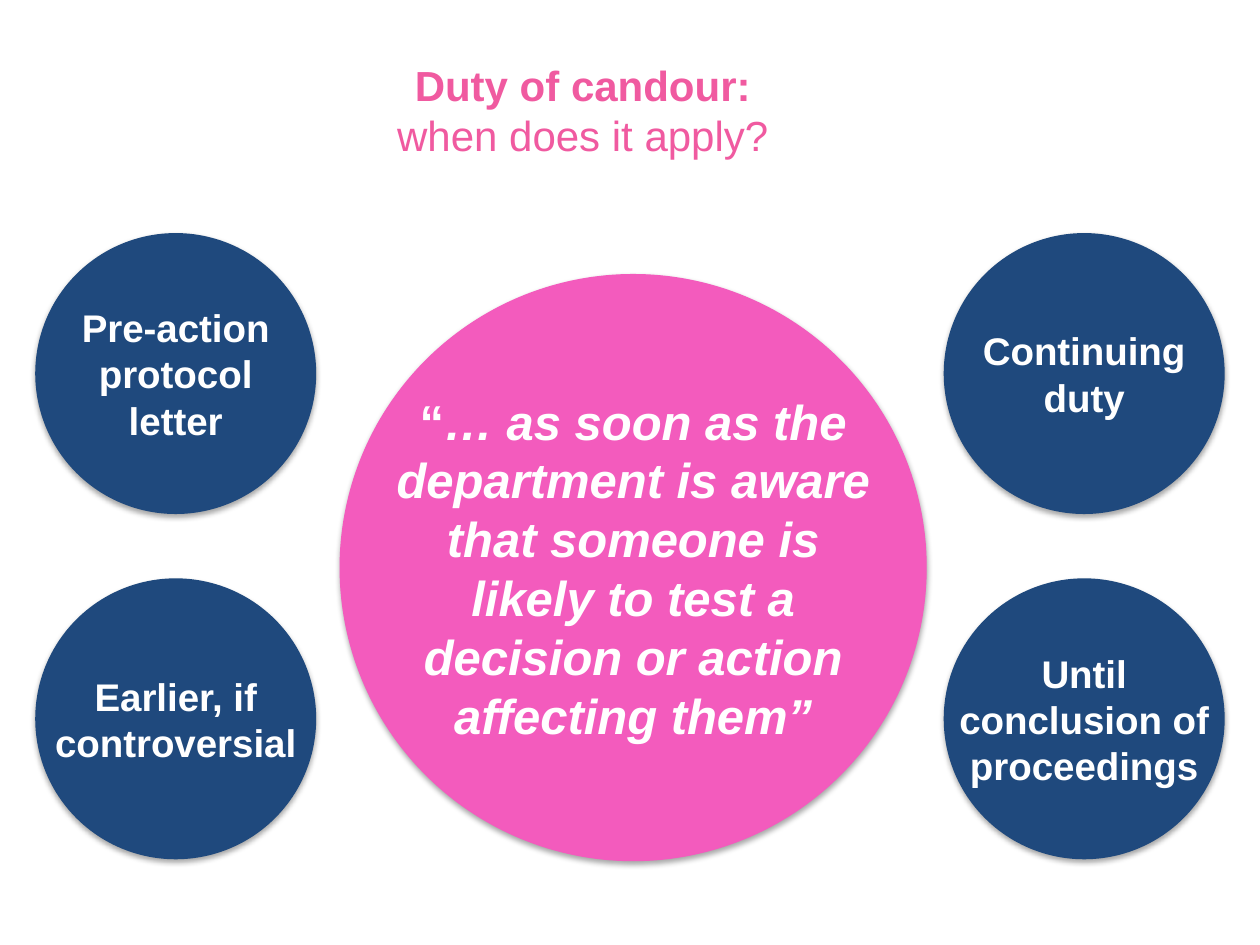
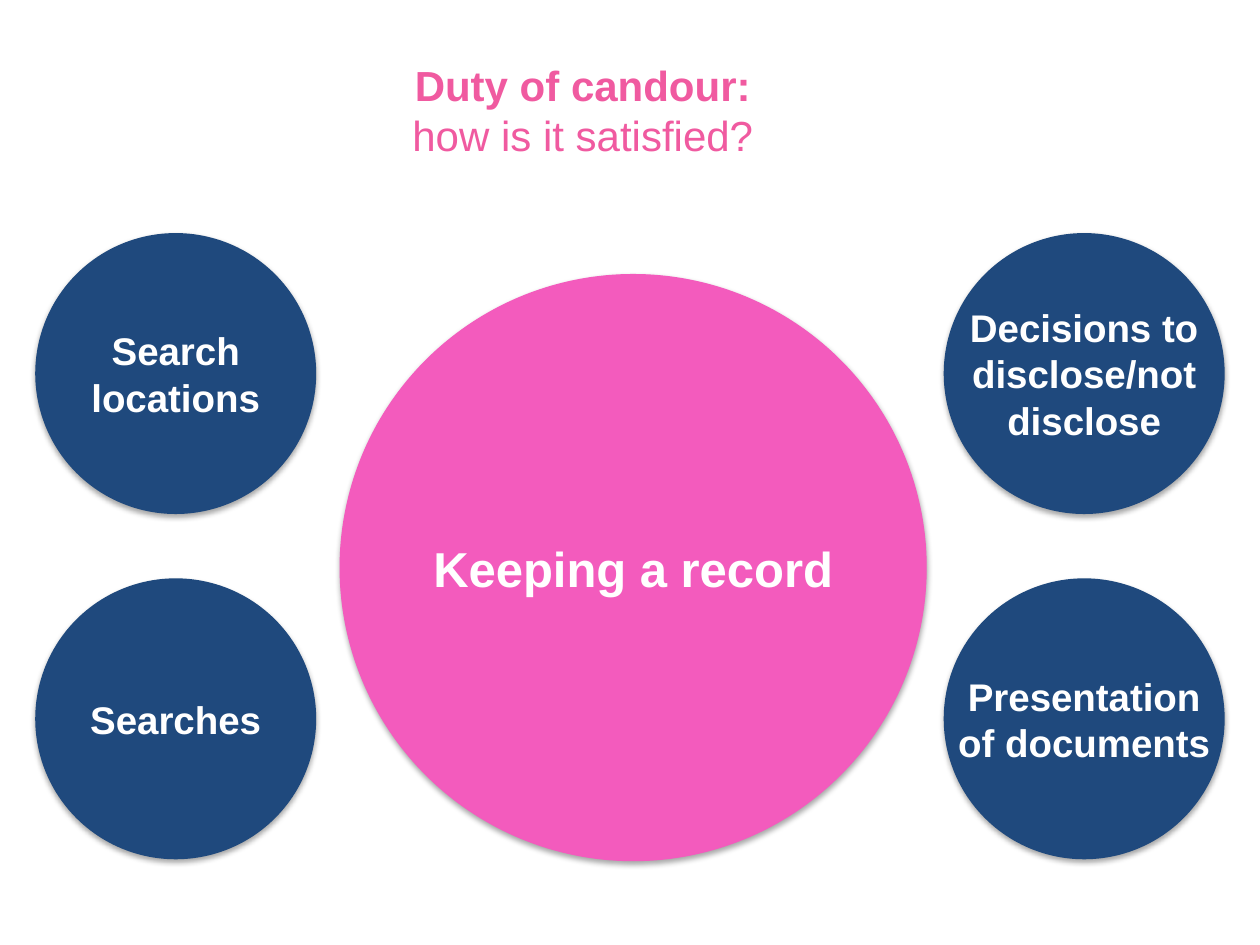
from lxml import etree
from pptx import Presentation
from pptx.dml.color import RGBColor
from pptx.enum.shapes import MSO_SHAPE
from pptx.enum.text import MSO_ANCHOR, PP_ALIGN
from pptx.oxml.ns import qn
from pptx.util import Inches, Pt

# Content: each run is (text, italic); corner labels are keyed by (column, row)
SLIDES = [
    {
        "title": ("Duty of candour:", "when does it apply?"),
        "centre": [
            ("“", False),
            ("… as soon as the department is aware that someone is likely "
             "to test a decision or action affecting them”", True),
        ],
        "corners": {
            (1, 0): "Continuing duty",
            (0, 0): "Pre-action protocol letter",
            (0, 1): "Earlier, if controversial",
            (1, 1): "Until conclusion of proceedings",
        },
    },
    {
        "title": ("Duty of candour:", "how is it satisfied?"),
        "centre": [("Keeping a record", False)],
        "corners": {
            (1, 0): "Decisions to disclose/not disclose",
            (0, 0): "Search locations",
            (0, 1): "Searches",
            (1, 1): "Presentation of documents",
        },
    },
]

# Shared style
FONT = "Arial"
WHITE = RGBColor(0xFF, 0xFF, 0xFF)
TITLE_PINK = RGBColor(0xF0, 0x5A, 0xA0)
CIRCLE_PINK = RGBColor(0xF3, 0x5B, 0xBD)
NAVY = RGBColor(0x1F, 0x49, 0x7D)
ELLIPSE = MSO_SHAPE.OVAL
CENTRE = PP_ALIGN.CENTER
MIDDLE = MSO_ANCHOR.MIDDLE
TOP = MSO_ANCHOR.TOP

# Layout in inches
SLIDE_WIDTH, SLIDE_HEIGHT = 10, 7.5
TITLE_BOX = (0.5, 0.42, 8.25, 0.83)
SIDE_MARGIN = 0.28
CORNER_SIZE = 2.23
CORNER_TOP, CORNER_PITCH = 1.85, 2.74
COLUMN_PITCH = SLIDE_WIDTH - 2 * SIDE_MARGIN - CORNER_SIZE
CENTRE_LEFT, CENTRE_TOP, CENTRE_SIZE = 2.7, 2.18, 4.65
CENTRE_TEXT_WIDTH = 4.12


def add_text_box(parent, box, anchor):
    text_box = parent.shapes.add_textbox(*map(Inches, box))
    text_frame = text_box.text_frame
    text_frame.word_wrap = True
    text_frame.vertical_anchor = anchor
    paragraph = text_frame.paragraphs[0]
    paragraph.alignment = CENTRE
    return paragraph


def add_run(paragraph, text, size, color, bold=True, italic=False):
    run = paragraph.add_run()
    run.text = text
    font = run.font
    font.name, font.size = FONT, Pt(size)
    font.bold, font.italic = bold, italic
    font.color.rgb = color


def add_soft_shadow(shape):
    shape.shadow.inherit = False
    effects = shape._element.spPr.find(qn("a:effectLst"))
    shadow = etree.SubElement(
        effects, qn("a:outerShdw"), blurRad=str(Pt(3.1)), dist=str(Pt(1.8)),
        dir="5400000", rotWithShape="0")
    color = etree.SubElement(shadow, qn("a:srgbClr"), val="000000")
    etree.SubElement(color, qn("a:alpha"), val="35000")


def add_circle(slide, left, top, size, fill, runs, text_size, text_width, outlined=False):
    """Group a shadowed circle with a label centred on it."""
    group = slide.shapes.add_group_shape()
    circle = group.shapes.add_shape(ELLIPSE, *map(Inches, (left, top, size, size)))
    circle.fill.solid()
    circle.fill.fore_color.rgb = fill
    if outlined:
        circle.line.color.rgb = fill
        circle.line.width = Pt(0.75)
    else:
        circle.line.fill.background()
    add_soft_shadow(circle)

    text_left = left + (size - text_width) / 2
    paragraph = add_text_box(group, (text_left, top, text_width, size), MIDDLE)
    for text, italic in runs:
        add_run(paragraph, text, text_size, WHITE, italic=italic)


def add_title(slide, heading, question):
    paragraph = add_text_box(slide, TITLE_BOX, TOP)
    add_run(paragraph, heading, 24, TITLE_PINK)
    paragraph.add_line_break()
    add_run(paragraph, question, 24, TITLE_PINK, bold=False)


def build_slide(presentation, content):
    slide = presentation.slides.add_slide(presentation.slide_layouts[6])
    add_title(slide, *content["title"])
    add_circle(slide, CENTRE_LEFT, CENTRE_TOP, CENTRE_SIZE, CIRCLE_PINK,
               content["centre"], 28, CENTRE_TEXT_WIDTH, outlined=True)
    for (column, row), label in content["corners"].items():
        add_circle(slide, SIDE_MARGIN + column * COLUMN_PITCH,
                   CORNER_TOP + row * CORNER_PITCH, CORNER_SIZE, NAVY,
                   [(label, False)], 22, CORNER_SIZE)


def main():
    presentation = Presentation()
    presentation.slide_width = Inches(SLIDE_WIDTH)
    presentation.slide_height = Inches(SLIDE_HEIGHT)
    for content in SLIDES:
        build_slide(presentation, content)
    presentation.save("out.pptx")


if __name__ == "__main__":
    main()
